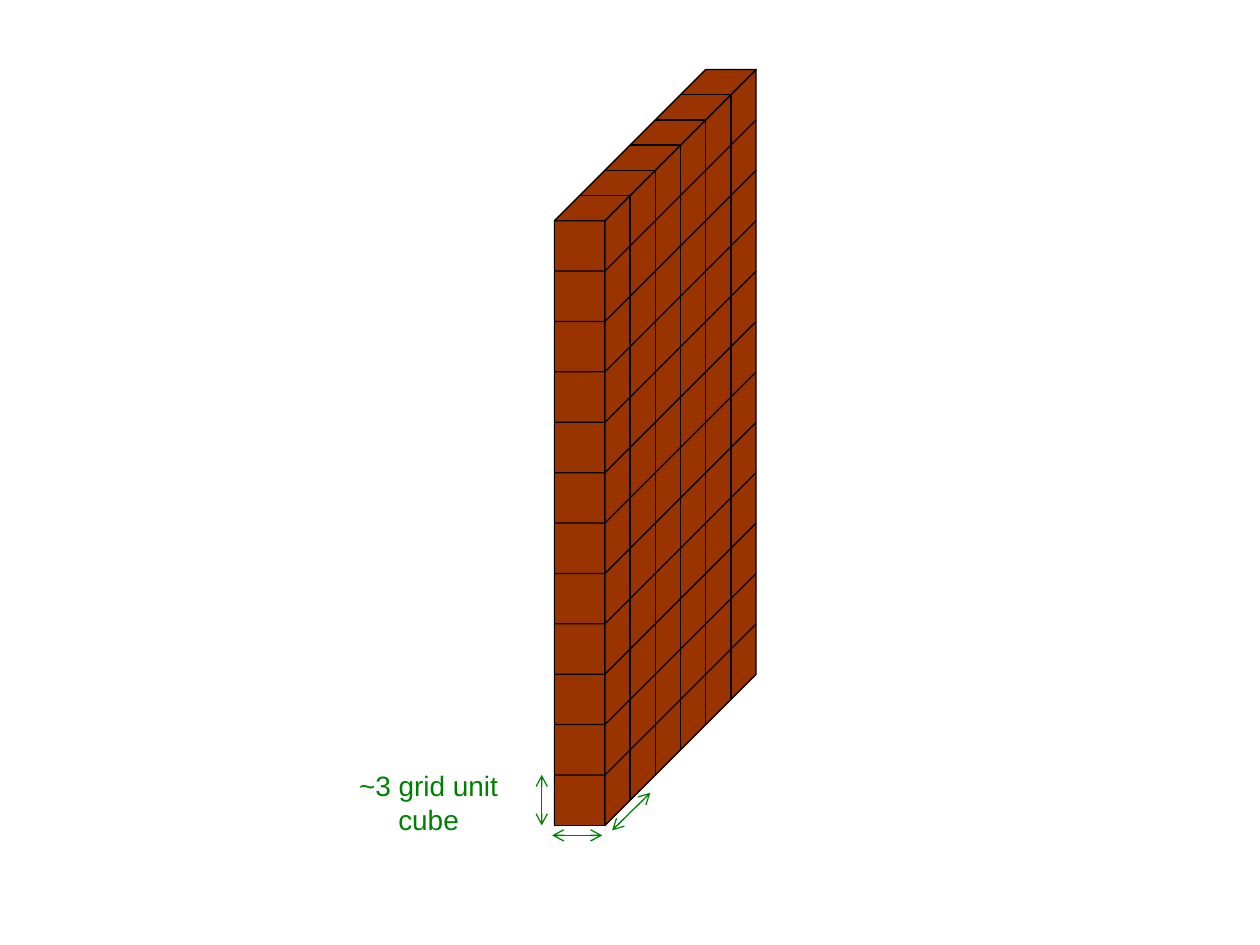
from lxml import etree
from pptx import Presentation
from pptx import util as u
from pptx.dml.color import RGBColor
from pptx.enum import shapes, text
from pptx.oxml import ns

BRICK = RGBColor(0x99, 0x33, 0x00)
EDGE = RGBColor(0x00, 0x00, 0x00)
GREEN = RGBColor(0x00, 0x80, 0x00)

LEVELS, DEPTH = 12, 6
WALL_LEFT, WALL_BOTTOM = u.Cm(11.18), u.Cm(16.64)
CUBE = u.Cm(12.19) / LEVELS
LINE_WIDTH = u.Pt(0.75)

# (column, depth, level) corners
BACK_SIDE = [(0, 0, 0), (0, DEPTH, 0), (0, DEPTH, LEVELS), (0, 0, LEVELS)]
RIGHT_SIDE = [(1, 0, 0), (1, DEPTH, 0), (1, DEPTH, LEVELS), (1, 0, LEVELS)]
TOP = [(1, 0, LEVELS), (1, DEPTH, LEVELS), (0, DEPTH, LEVELS), (0, 0, LEVELS)]
LEVEL_JOINTS = [[(0, 0, n), (1, 0, n), (1, DEPTH, n)] for n in range(1, LEVELS)]
DEPTH_JOINTS = [[(0, n, LEVELS), (1, n, LEVELS), (1, n, 0)] for n in range(1, DEPTH)]

CUBE_ARROWS = [
    (10.92, 15.62, 10.92, 16.64),
    (11.13, 16.84, 12.14, 16.84),
    (12.34, 16.74, 13.11, 15.98),
]
CUBE_LABEL = "~3 grid unit cube"
LABEL_BOX = (6.86, 15.37, 3.56, 1.63)
LABEL_FONT = {"name": "Arial", "size": u.Pt(16)}
LABEL_FRAME = {"word_wrap": True, "auto_size": text.MSO_AUTO_SIZE.SHAPE_TO_FIT_TEXT}


def project(corner):
    column, depth, level = corner
    return (round(WALL_LEFT + (column + depth / 2) * CUBE),
            round(WALL_BOTTOM - (level + depth / 2) * CUBE))


def set_all(target, values):
    for name, value in values.items():
        setattr(target, name, value)


def ink(part, color):
    part.line.color.rgb = color
    part.line.width = LINE_WIDTH


def finish(part, filled):
    part.shadow.inherit = False
    ink(part, EDGE)
    if filled:
        part.fill.solid()
        part.fill.fore_color.rgb = BRICK
    else:
        part.fill.background()


def outline(slide, corners, filled):
    points = [project(corner) for corner in corners]
    builder = slide.shapes.build_freeform(*points[0])
    builder.add_line_segments(points[1:], close=filled)
    finish(builder.convert_to_shape(), filled)


def front(slide):
    left, top = project((0, 0, LEVELS))
    right, bottom = project((1, 0, 0))
    face = slide.shapes.add_shape(
        shapes.MSO_SHAPE.RECTANGLE, left, top, right - left, bottom - top)
    finish(face, True)


def double_arrow(slide, ends):
    arrow = slide.shapes.add_connector(
        shapes.MSO_CONNECTOR.STRAIGHT, *map(u.Cm, ends))
    ink(arrow, GREEN)
    for end in ("a:headEnd", "a:tailEnd"):
        etree.SubElement(arrow.line._get_or_add_ln(), ns.qn(end), type="arrow")
    etree.SubElement(arrow._element.spPr, ns.qn("a:effectLst"))


def label(slide):
    frame = slide.shapes.add_textbox(*map(u.Cm, LABEL_BOX)).text_frame
    set_all(frame, LABEL_FRAME)
    paragraph = frame.paragraphs[0]
    paragraph.alignment = text.PP_ALIGN.CENTER
    run = paragraph.add_run()
    run.text = CUBE_LABEL
    set_all(run.font, LABEL_FONT)
    run.font.color.rgb = GREEN


def main():
    deck = Presentation()
    set_all(deck, {"slide_width": u.Cm(25.4), "slide_height": u.Cm(19.05)})
    slide = deck.slides.add_slide(deck.slide_layouts[6])
    outline(slide, BACK_SIDE, True)
    front(slide)
    for side in (RIGHT_SIDE, TOP):
        outline(slide, side, True)
    for joint in LEVEL_JOINTS + DEPTH_JOINTS:
        outline(slide, joint, False)
    for ends in CUBE_ARROWS:
        double_arrow(slide, ends)
    label(slide)
    deck.save("out.pptx")


if __name__ == "__main__":
    main()
